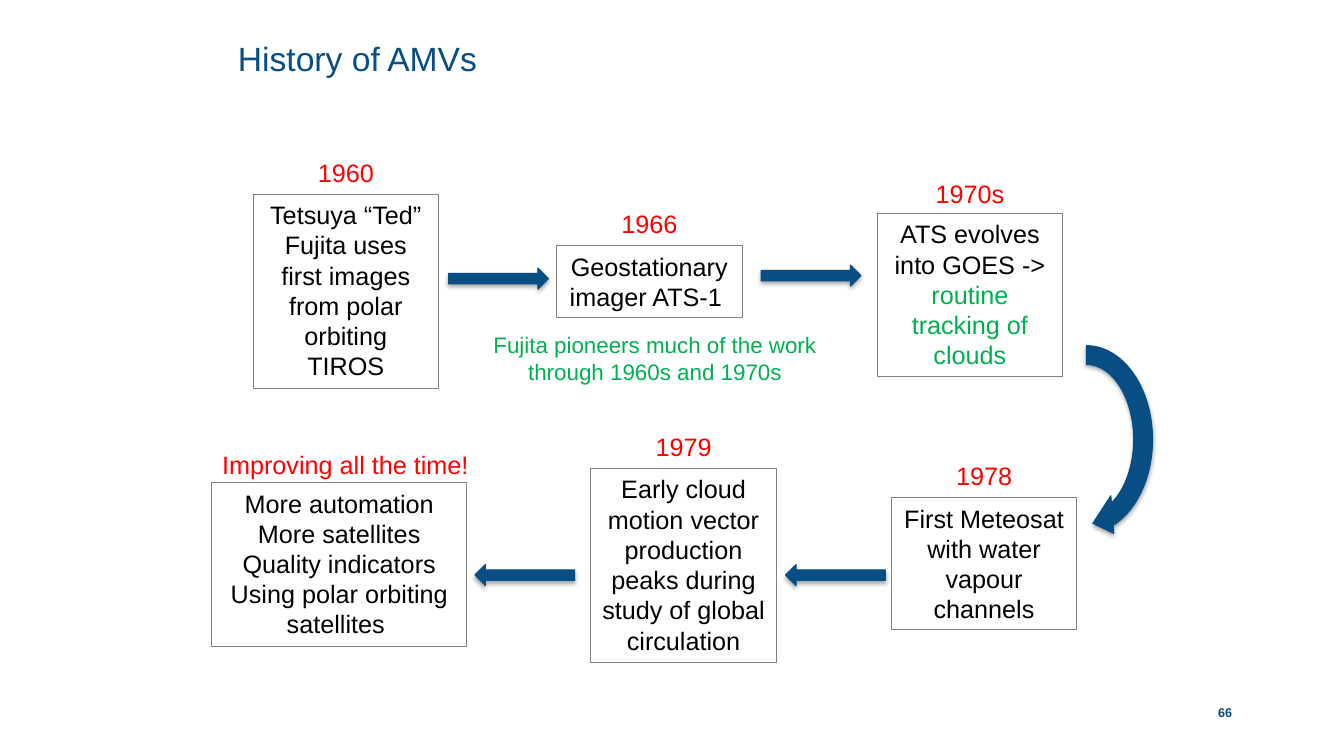
from dataclasses import dataclass

from lxml import etree
from pptx import Presentation
from pptx import util as u
from pptx.dml.color import RGBColor
from pptx.enum import shapes, text
from pptx.oxml import ns


@dataclass(frozen=True)
class Theme:
    font: str = "Arial"
    blue: str = "064E83"
    red: str = "FF0000"
    green: str = "00B050"
    black: str = "000000"
    gray: str = "808080"
    head: int = 24
    body: int = 18
    note: int = 16
    page: int = 9
    edge: float = 0.75


T = Theme()
MID = text.PP_ALIGN.CENTER
LEFT = text.PP_ALIGN.LEFT


def place(box):
    return [u.Inches(n) for n in box]


def style(run, size, color, bold=False):
    run.font.name = T.font
    run.font.size = u.Pt(size)
    run.font.bold = bold
    run.font.color.rgb = RGBColor.from_string(color)


def write(shape, words, size, color, align=MID, bold=False, inset=None):
    frame = shape.text_frame
    frame.text = words
    frame.word_wrap = True
    frame.vertical_anchor = text.MSO_ANCHOR.TOP
    if inset is not None:
        frame.margin_left = frame.margin_right = u.Inches(inset)
        frame.margin_top = frame.margin_bottom = u.Inches(inset)
    for para in frame.paragraphs:
        para.alignment = align
        for run in para.runs:
            style(run, size, color, bold)
    return frame


def label(slide, box, words, size, color, **opts):
    return write(slide.shapes.add_textbox(*place(box)), words, size, color, **opts)


def event(slide, box, date, words, tail="", gap=0.42, wide=1.22, shift=0):
    """Outlined box with its date centred above it."""
    left, top, width, _ = box
    rect = slide.shapes.add_shape(shapes.MSO_SHAPE.RECTANGLE, *place(box))
    rect.shadow.inherit = False
    rect.fill.background()
    rect.line.color.rgb = RGBColor.from_string(T.gray)
    rect.line.width = u.Pt(T.edge)
    frame = write(rect, words, T.body, T.black)
    if tail:
        run = frame.paragraphs[-1].add_run()
        run.text = tail
        style(run, T.body, T.green)
    mid = left + width / 2 + shift
    label(slide, (mid - wide / 2, top - gap, wide, gap), date, T.body, T.red)


def arrow(slide, box, kind=shapes.MSO_SHAPE.RIGHT_ARROW, turn=0, bend=()):
    """Solid arrow with a soft shadow below."""
    shape = slide.shapes.add_shape(kind, *place(box))
    shape.rotation = turn
    for i, value in enumerate(bend):
        shape.adjustments[i] = value
    color = RGBColor.from_string(T.blue)
    shape.fill.solid()
    shape.fill.fore_color.rgb = color
    shape.line.color.rgb = color
    shape.line.width = u.Pt(T.edge)
    shape.shadow.inherit = False
    effects = shape._element.spPr.find(ns.qn("a:effectLst"))
    shade = etree.SubElement(effects, ns.qn("a:outerShdw"), blurRad="40000",
                             dist="23000", dir="5400000", rotWithShape="0")
    tint = etree.SubElement(shade, ns.qn("a:srgbClr"), val=T.black)
    etree.SubElement(tint, ns.qn("a:alpha"), val="35000")


def header(slide, box):
    frame = label(slide, box, "History of AMVs", T.head, T.blue, align=LEFT, inset=0)
    frame.paragraphs[0].line_spacing = u.Pt(28)


def footer(slide, box):
    frame = label(slide, box, "66", T.page, T.blue, bold=True, inset=0)
    frame.vertical_anchor = text.MSO_ANCHOR.BOTTOM


def early(slide, box):
    """Upper row, read left to right."""
    x, y, _, _ = box
    wide = 1.84
    event(slide, (x, y, wide, 1.92), "1960",
          "Tetsuya “Ted” Fujita uses first images from polar orbiting TIROS")
    event(slide, (x + 3.01, y + 0.51, wide, 0.71), "1966",
          "Geostationary imager ATS-1 ")
    event(slide, (x + 6.19, y + 0.19, wide, 1.62), "1970s",
          "ATS evolves into GOES -> ", tail="routine tracking of clouds", gap=0.4)
    label(slide, (x + 2.23, y + 1.31, 3.51, 0.64),
          "Fujita pioneers much of the work through 1960s and 1970s",
          T.note, T.green)
    arrow(slide, (x + 1.94, y + 0.73, 0.99, 0.21))
    arrow(slide, (x + 5.04, y + 0.7, 0.99, 0.21))


def late(slide, box):
    """Lower row, read right to left."""
    x, y, _, _ = box
    wide = 1.84
    event(slide, (x + 6.74, y + 0.29, wide, 1.31), "1978",
          "First Meteosat with water vapour channels")
    event(slide, (x + 3.76, y, wide, 1.92), "1979",
          "Early cloud motion vector production peaks during study of "
          "global circulation")
    event(slide, (x, y + 0.14, 2.53, 1.62), "Improving all the time!",
          "More automation\nMore satellites\nQuality indicators\n"
          "Using polar orbiting satellites ", gap=0.38, wide=2.69, shift=0.06)
    for step in (5.69, 2.61):
        arrow(slide, (x + step, y + 0.95, 0.99, 0.21), turn=180)


def main():
    deck = Presentation()
    deck.slide_width, deck.slide_height = u.Inches(13.33), u.Inches(7.5)
    slide = deck.slides.add_slide(deck.slide_layouts[6])
    header(slide, (2.36, 0.39, 8.61, 0.4))
    early(slide, (2.51, 1.93, 8.03, 1.95))
    # Bend from the upper row to the lower one
    arrow(slide, (9.75, 3.61, 2.05, 1.5), shapes.MSO_SHAPE.CIRCULAR_ARROW,
          turn=90, bend=(0.125, 8.788, 204.577, 108, 0.125))
    late(slide, (2.1, 4.65, 8.58, 1.92))
    footer(slide, (10.97, 6.9, 2.36, 0.24))
    deck.save("out.pptx")


if __name__ == "__main__":
    main()
